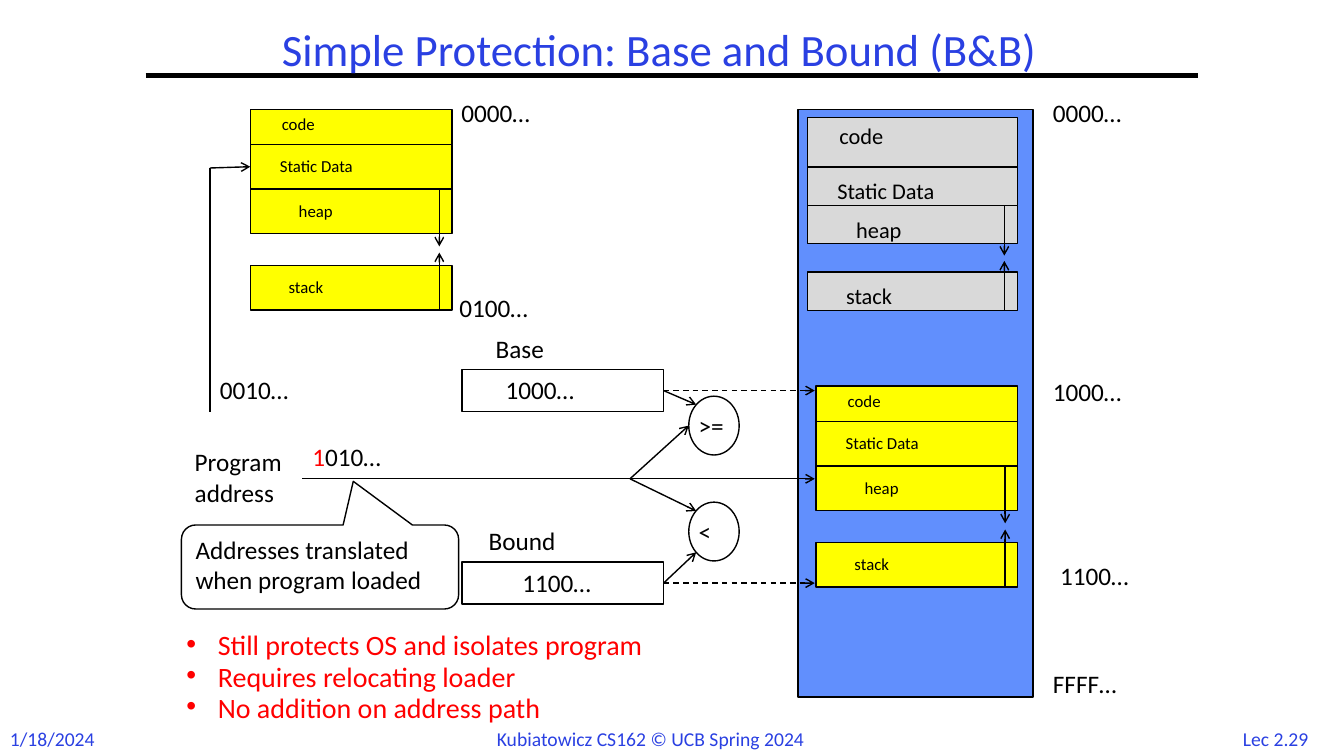
"""Build the base and bound memory protection slide."""
from lxml import etree
from pptx import Presentation
from pptx import util as u
from pptx.dml import color
from pptx.enum import dml, shapes, text
from pptx.oxml import ns

COLORS = {"blue": "2A40E2", "memory": "618FFD", "grey": "D9D9D9", "yellow": "FFFF00",
          "red": "FF0000", "black": "000000", "white": "FFFFFF"}
SEGMENTS = [("code", 15.4, 3.3), ("Static Data", 14, 6.05),
            ("heap", 27.5, 3.4), ("stack", 20.3, 3.5)]


class Slide:
    font = "Calibri"

    def __init__(self, deck):
        self.page = deck.slides.add_slide(deck.slide_layouts[6])

    def rgb(self, name):
        return color.RGBColor.from_string(COLORS[name])

    def add_span(self, para, words, size, tint="black"):
        span = para.add_run()
        span.text = words
        span.font.name = self.font
        span.font.size = u.Pt(size)
        span.font.color.rgb = self.rgb(tint)

    def label(self, left, top, width, height, lines, size=18, tint="black", wrap=False,
              align=text.PP_ALIGN.LEFT):
        box = self.page.shapes.add_textbox(u.Pt(left), u.Pt(top), u.Pt(width), u.Pt(height))
        frame = box.text_frame
        frame.word_wrap = wrap
        frame.auto_size = (text.MSO_AUTO_SIZE.NONE if wrap
                           else text.MSO_AUTO_SIZE.SHAPE_TO_FIT_TEXT)
        for index, line in enumerate(lines):
            para = frame.paragraphs[0] if index == 0 else frame.add_paragraph()
            para.alignment = align
            runs = [(line, tint)] if isinstance(line, str) else line
            for words, shade in runs:
                self.add_span(para, words, size, shade)
        return frame

    def shape(self, kind, left, top, width, height, fill=None):
        box = self.page.shapes.add_shape(kind, u.Pt(left), u.Pt(top), u.Pt(width), u.Pt(height))
        box.shadow.inherit = False
        if fill:
            box.fill.solid()
            box.fill.fore_color.rgb = self.rgb(fill)
        else:
            box.fill.background()
        box.line.color.rgb = self.rgb("black")
        box.line.width = u.Pt(1)
        return box

    def rect(self, *args):
        return self.shape(shapes.MSO_SHAPE.RECTANGLE, *args)

    def line(self, x1, y1, x2, y2, arrow=True, dashed=False, width=1, start=None, end=None):
        link = self.page.shapes.add_connector(
            shapes.MSO_CONNECTOR.STRAIGHT, u.Pt(x1), u.Pt(y1), u.Pt(x2), u.Pt(y2))
        link.line.color.rgb = self.rgb("black")
        link.line.width = u.Pt(width)
        if dashed:
            link.line.dash_style = dml.MSO_LINE.DASH
        if arrow:
            outline = link._element.spPr.find(ns.qn("a:ln"))
            etree.SubElement(outline, ns.qn("a:tailEnd")).set("type", "arrow")
        etree.SubElement(link._element.spPr, ns.qn("a:effectLst"))
        if start is not None:
            link.begin_connect(start, 3)
        if end is not None:
            link.end_connect(end, 1)

    def program(self, left, top, width, rows, fill, size, arrow_x, tips):
        boxes = []
        for index, ((name, indent, ratio), (offset, height)) in enumerate(zip(SEGMENTS, rows)):
            boxes.append(self.rect(left, top + offset, width, height, fill))
            drop = 0 if index == 0 else (4.6 if size == 12 else 3.8)
            self.label(left + indent, top + offset + drop, ratio * size, size * 1.2 + 7.2,
                       [name], size)
        x = left + arrow_x
        self.line(x, top + sum(rows[3]), x, top + tips[1])
        self.line(x, top + rows[2][0], x, top + tips[0])
        return boxes

    def register(self, top, name, name_x, name_width, value, value_x):
        box = self.rect(330, top, 144, 30)
        self.label(name_x, top - 29.5, name_width, 28.8, [name])
        self.label(value_x, top, 73, 28.8, [value])
        self.line(474, top + 15, 582, top + 15, dashed=True, start=box)
        return box

    def comparator(self, top, sign, width):
        self.shape(shapes.MSO_SHAPE.OVAL, 492, top, 36, 42)
        self.label(492, top + 6.5, width, 28.8, [sign])

    def bullets(self, left, top, width, height, lines):
        frame = self.label(left, top, width, height, lines, 20, "red", wrap=True)
        for para in frame.paragraphs:
            para.line_spacing = 0.7
            para.space_before = u.Pt(5.5)
            props = para._p.get_or_add_pPr()
            props.set("marL", str(u.Pt(22.5)))
            props.set("indent", str(u.Pt(-22.5)))
            etree.SubElement(props, ns.qn("a:buFont")).set("typeface", "Arial")
            etree.SubElement(props, ns.qn("a:buChar")).set("char", "•")

    def callout(self, left, top, width, height, words):
        box = self.shape(shapes.MSO_SHAPE.ROUNDED_RECTANGULAR_CALLOUT,
                         left, top, width, height, "white")
        for index, value in enumerate((0.12, -1.02, 0.17)):
            box.adjustments[index] = value
        frame = box.text_frame
        frame.word_wrap = True
        frame.vertical_anchor = text.MSO_ANCHOR.TOP
        frame.paragraphs[0].alignment = text.PP_ALIGN.LEFT
        self.add_span(frame.paragraphs[0], words, 18)


def main():
    deck = Presentation()
    deck.slide_width, deck.slide_height = u.Pt(960), u.Pt(540)
    slide = Slide(deck)
    center = text.PP_ALIGN.CENTER

    slide.label(876.2, 515.5, 70, 24, ["Lec 2.29"], 14, "blue", align=center)
    slide.label(0, 515.5, 77, 24, ["1/18/2024"], 14, "blue")
    slide.label(347.8, 515.5, 265, 24, ["Kubiatowicz CS162 © UCB Spring 2024"], 14, "blue")
    slide.line(104, 54, 856, 54, arrow=False, width=3)
    title = slide.label(138, 8, 666, 58, ["Simple Protection: Base and Bound (B&B)"],
                        32, "blue", wrap=True, align=center)
    title.vertical_anchor = text.MSO_ANCHOR.MIDDLE
    title.paragraphs[0].line_spacing = 0.9

    slide.rect(570, 78, 168, 420, "memory")
    grey_rows = [(0, 35.3), (35.3, 27.4), (62.7, 27.4), (110.2, 27.4)]
    yellow_rows = [(0, 25.2), (25.2, 31.8), (57, 31.8), (111.8, 31.8)]
    slide.program(577, 84, 150, grey_rows, "grey", 16, 140.4, (98.6, 102.4))
    slide.program(583, 275.8, 144, yellow_rows, "yellow", 12, 135, (98, 102.4))
    virtual = slide.program(178.8, 78, 144, yellow_rows, "yellow", 12, 135, (98, 102.4))

    for left, top, address in [(745, 66, "0000…"), (745, 474, "FFFF…"), (745, 265, "1000…"),
                               (322.5, 66, "0000…"), (750.2, 396.7, "1100…"),
                               (321, 205.2, "0100…"), (150, 264, "0010…")]:
        slide.label(left, top, 73, 28.8, [address])

    bound = slide.register(401.5, "Bound", 342, 67, "1100…", 366)
    base = slide.register(264, "Base", 347, 56, "1000…", 354)
    slide.comparator(283, ">=", 36)
    slide.comparator(358.7, "<", 25)
    slide.line(474, 279, 497.3, 289, start=base)
    slide.line(474, 416.5, 497.3, 394.5, start=bound)
    for x, y in [(492, 304), (497.3, 365), (582, 342)]:
        slide.line(450, 342, x, y)

    slide.line(150, 120, 178.8, 119, end=virtual[1])
    slide.line(150, 120, 150, 294, arrow=False)
    slide.label(132, 315.5, 84, 51, ["Program", "address"])
    slide.line(216, 342, 450, 342, arrow=False)
    slide.label(216, 312, 73, 28.8, [[("1", "red"), ("010…", "black")]])
    slide.bullets(126, 451.5, 444, 100, ["Still protects OS and isolates program",
                                         "Requires relocating loader",
                                         "No addition on address path"])
    slide.callout(129.6, 375, 198, 60, "Addresses translated when program loaded")
    deck.save("out.pptx")


if __name__ == "__main__":
    main()
